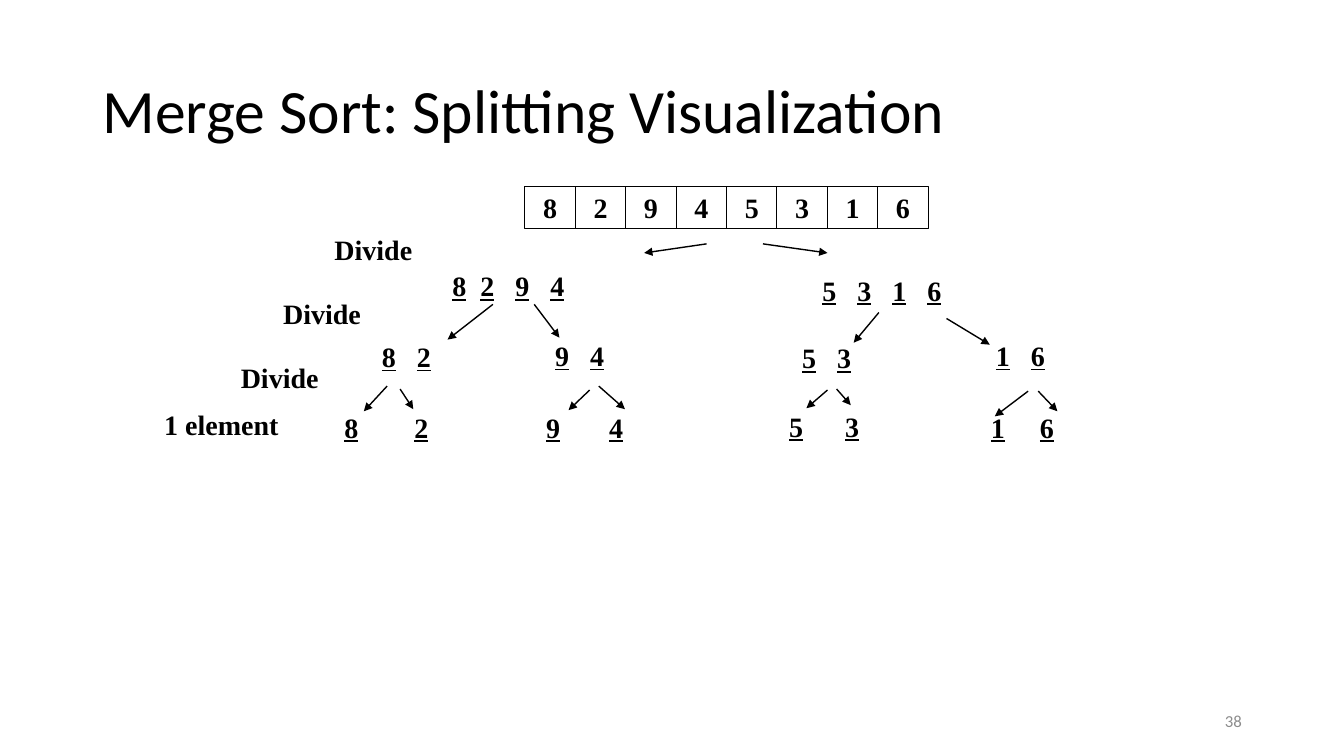
from dataclasses import dataclass

from lxml import etree
from pptx import Presentation
from pptx import util as u
from pptx.dml.color import RGBColor
from pptx.enum import shapes, text
from pptx.oxml import ns

BLACK = RGBColor(0x00, 0x00, 0x00)
GREY = RGBColor(0x8C, 0x8C, 0x8C)
SERIF, SANS = "Times New Roman", "Calibri"
HIGH = 31.7  # height of a one-line box
DIGIT = 10  # width of one digit at 20 pt
PAD = 15  # left and right insets together


@dataclass
class Label:
    words: str
    x: float
    y: float
    width: float = 70.6


@dataclass
class Group:
    """Digits of one sublist; stops are their offsets after the first."""
    digits: str
    x: float
    y: float
    stops: tuple[float, ...]
    joined: bool = True  # underline runs on through the gaps


@dataclass
class Arrow:
    x1: float
    y1: float
    x2: float
    y2: float


ITEMS = "82945316"

LABELS = [
    Label("Divide", 231.8, 162.7),
    Label("Divide", 195.1, 208.1),
    Label("Divide", 164.9, 254.2),
    Label("1 element", 110.2, 287.3, 96.5),
]

GROUPS = [
    # Halves
    Group("8294", 316.1, 188.6, (20, 45, 70)),
    Group("5316", 580.3, 191.5, (25, 50, 75)),
    # Pairs
    Group("82", 265.7, 239, (25,)),
    Group("94", 389.5, 238.3, (25,)),
    Group("53", 565.9, 239.8, (25,)),
    Group("16", 704.2, 238.3, (25,)),
    # Single elements
    Group("82", 239, 289.4, (50,), False),
    Group("94", 383, 289.4, (45,), False),
    Group("53", 556.6, 288.7, (40,), False),
    Group("16", 700.6, 289.4, (35,), False),
]

ARROWS = [
    # List to halves
    Arrow(504.7, 174.2, 460.1, 180.7),
    Arrow(545, 174.2, 591.1, 180.7),
    # Halves to pairs
    Arrow(352.1, 217.4, 319.7, 242.6),
    Arrow(381.6, 217.4, 399.6, 241.2),
    Arrow(627.8, 223.2, 609.8, 244.8),
    Arrow(676.1, 227.5, 707, 246.2),
    # Pairs to single elements
    Arrow(276.5, 275.8, 259.9, 293.8),
    Arrow(285.8, 277.9, 295.2, 292.3),
    Arrow(421.2, 278.6, 406.1, 293),
    Arrow(427.7, 275.8, 446.4, 292.3),
    Arrow(591.1, 278.6, 576, 291.6),
    Arrow(597.6, 277.9, 607.7, 289.4),
    Arrow(734.4, 279.4, 710.6, 297.4),
    Arrow(741.6, 279.4, 755.3, 293.8),
]


def write(shape, words: str | list[tuple[str, bool]], *, font: str = SERIF,
          size: float = 20, bold: bool = True, color: RGBColor = BLACK,
          align=text.PP_ALIGN.LEFT, anchor=text.MSO_ANCHOR.TOP,
          wrap: bool = False, spacing: float | None = None):
    """Fill a shape with one paragraph; a list holds (words, underline)."""
    frame = shape.text_frame
    frame.word_wrap = wrap
    frame.vertical_anchor = anchor
    para = frame.paragraphs[0]
    para.alignment = align
    if spacing:
        para.line_spacing = spacing
    for part, under in [(words, False)] if isinstance(words, str) else words:
        run = para.add_run()
        run.text = part
        run.font.name = font
        run.font.size = u.Pt(size)
        run.font.bold = bold
        run.font.underline = under
        run.font.color.rgb = color
    return para


def add_box(slide, x: float, y: float, width: float, height: float = HIGH):
    return slide.shapes.add_textbox(u.Pt(x), u.Pt(y), u.Pt(width), u.Pt(height))


def add_cell(slide, digit: str, x: float, y: float, width: float, height: float) -> None:
    cell = slide.shapes.add_shape(
        shapes.MSO_SHAPE.RECTANGLE, u.Pt(x), u.Pt(y), u.Pt(width), u.Pt(height))
    cell.shadow.inherit = False
    cell.fill.background()
    cell.line.color.rgb = BLACK
    cell.line.width = u.Pt(0.75)
    write(cell, digit, align=text.PP_ALIGN.CENTER, anchor=text.MSO_ANCHOR.MIDDLE)


def add_group(slide, group: Group) -> None:
    box = add_box(slide, group.x, group.y, group.stops[-1] + DIGIT + PAD)
    parts = [(group.digits[0], True)]
    for digit in group.digits[1:]:
        parts += [("\t", group.joined), (digit, True)]
    para = write(box, parts, wrap=True)
    tabs = etree.SubElement(para._p.get_or_add_pPr(), ns.qn("a:tabLst"))
    for stop in group.stops:
        etree.SubElement(tabs, ns.qn("a:tab"), pos=str(int(u.Pt(stop))), algn="l")


def add_arrow(slide, arrow: Arrow) -> None:
    link = slide.shapes.add_connector(
        shapes.MSO_CONNECTOR.STRAIGHT, u.Pt(arrow.x1), u.Pt(arrow.y1),
        u.Pt(arrow.x2), u.Pt(arrow.y2))
    link.line.color.rgb = BLACK
    link.line.width = u.Pt(1)
    etree.SubElement(link.line._get_or_add_ln(), ns.qn("a:tailEnd"), type="triangle")
    etree.SubElement(link._element.spPr, ns.qn("a:effectLst"))


def main() -> None:
    deck = Presentation()
    deck.slide_width, deck.slide_height = u.Pt(960), u.Pt(540)
    slide = deck.slides.add_slide(deck.slide_layouts[6])

    # Title
    write(add_box(slide, 66.2, 28.8, 828, 104.4), "Merge Sort: Splitting Visualization",
          font=SANS, size=44, bold=False, anchor=text.MSO_ANCHOR.MIDDLE,
          wrap=True, spacing=0.9)

    # Unsorted list
    for i, digit in enumerate(ITEMS):
        add_cell(slide, digit, 375 + 36 * i, 133.2, 36, 30.2)

    # Splitting tree
    for group in GROUPS:
        add_group(slide, group)
    for arrow in ARROWS:
        add_arrow(slide, arrow)
    for label in LABELS:
        write(add_box(slide, label.x, label.y, label.width), label.words)

    # Slide number
    write(add_box(slide, 678.2, 500.4, 216, 28.8), "38", font=SANS, size=12,
          bold=False, color=GREY, align=text.PP_ALIGN.RIGHT,
          anchor=text.MSO_ANCHOR.MIDDLE, wrap=True)

    deck.save("out.pptx")


if __name__ == "__main__":
    main()
